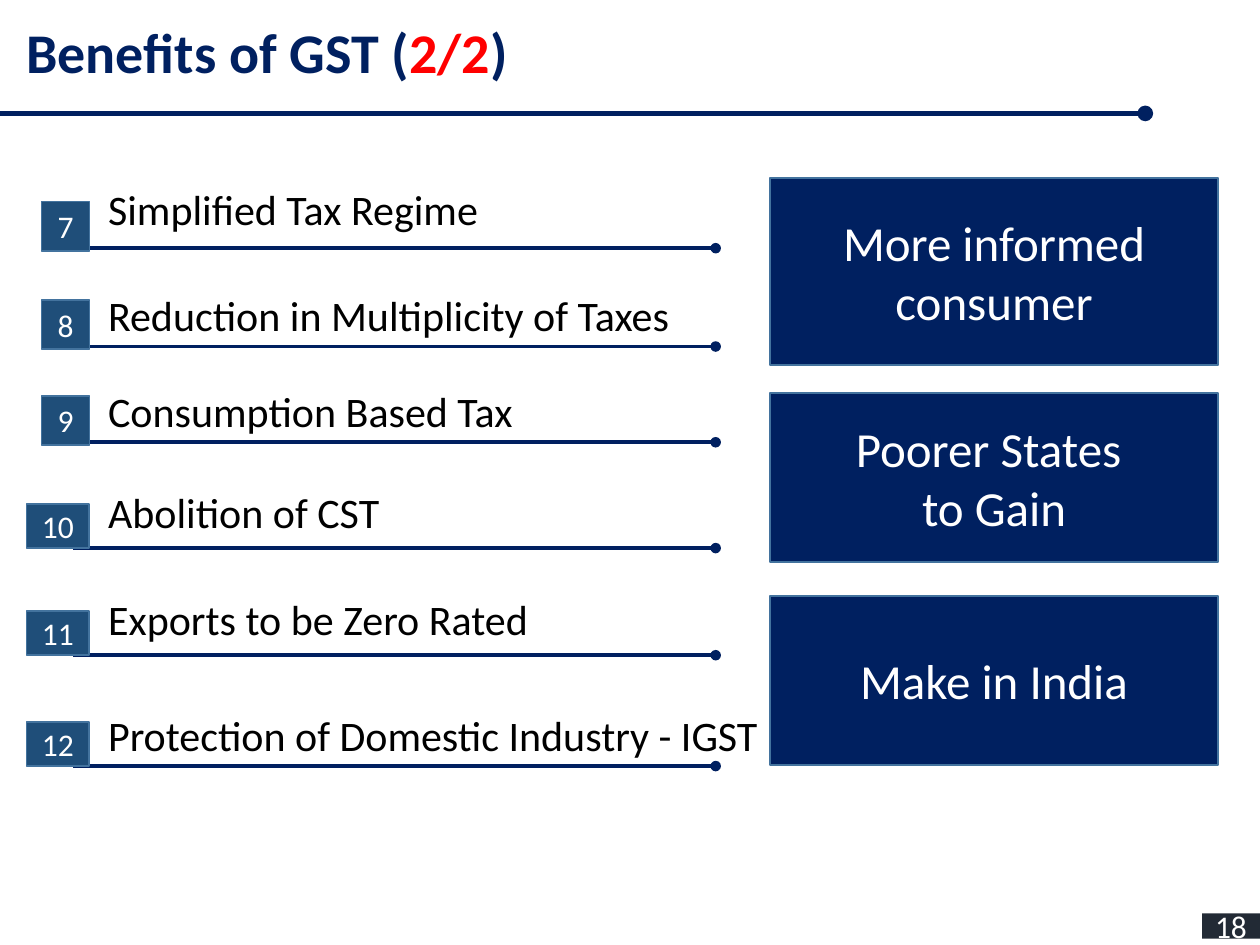
from lxml import etree
from pptx import Presentation
from pptx.dml.color import RGBColor
from pptx.enum.shapes import MSO_CONNECTOR, MSO_SHAPE
from pptx.enum.text import MSO_ANCHOR, MSO_AUTO_SIZE, PP_ALIGN
from pptx.oxml.ns import qn
from pptx.util import Inches, Pt

RECT = MSO_SHAPE.RECTANGLE
LINE = MSO_CONNECTOR.STRAIGHT
MID = MSO_ANCHOR.MIDDLE
MIDST = PP_ALIGN.CENTER
GROW = MSO_AUTO_SIZE.SHAPE_TO_FIT_TEXT
FONT = "Calibri"
HUES = {"navy": "002060", "red": "FF0000", "blue": "1F4E79", "edge": "43739E",
        "slate": "222A35", "white": "FFFFFF", "black": "000000"}

COLS, ROWS = 100, 75
CELL = Inches(10) // COLS

ITEMS = [
    ("7", "Simplified Tax Regime", 19.7, 5.6),
    ("8", "Reduction in Multiplicity of Taxes", 27.5, 5),
    ("9", "Consumption Based Tax", 35.1, 5),
    ("10", "Abolition of CST", 43.5, 5.4),
    ("11", "Exports to be Zero Rated", 52, 5.4),
    ("12", "Protection of Domestic Industry - IGST", 60.8, 5),
]
PANELS = [
    (["More informed consumer"], 14.1, 14.9),
    (["Poorer States ", "to Gain"], 31.2, 13.4),
    (["Make in India"], 47.3, 13.4),
]


def hue(name):
    return RGBColor.from_string(HUES[name])


def grid(*cells):
    return [round(n * CELL) for n in cells]


def style(para, size, color):
    para.font.name = FONT
    para.font.size = Pt(size)
    para.font.color.rgb = hue(color)


def rule(slide, left, right, y, width):
    line = slide.shapes.add_connector(LINE, *grid(left, y, right, y))
    line.line.color.rgb = hue("navy")
    line.line.width = Pt(width)
    pen = line.line._get_or_add_ln()
    etree.SubElement(pen, qn("a:tailEnd"), type="oval")
    etree.SubElement(line._element.spPr, qn("a:effectLst"))


def block(slide, box, texts, size, fill, edge=None):
    shape = slide.shapes.add_shape(RECT, *grid(*box))
    shape.shadow.inherit = False
    shape.fill.solid()
    shape.fill.fore_color.rgb = hue(fill)
    if edge:
        shape.line.color.rgb = hue(edge)
        shape.line.width = Pt(1)
    else:
        shape.line.fill.background()
    frame = shape.text_frame
    frame.vertical_anchor = MID
    frame.text = "\n".join(texts)
    for para in frame.paragraphs:
        para.alignment = MIDST
        style(para, size, "white")


def label(slide, box):
    frame = slide.shapes.add_textbox(*grid(*box)).text_frame
    frame.word_wrap = True
    frame.auto_size = GROW
    return frame.paragraphs[0]


def header(slide, box):
    left, top, width, height = box
    rule(slide, left, left + width, top + height, 3)
    para = label(slide, (left + 1.1, top + 0.9, 83.1, 6.4))
    style(para, 32, "navy")
    para.font.bold = True
    for text, color in (("Benefits of GST (", "navy"), ("2/2", "red"), (")", "navy")):
        run = para.add_run()
        run.text = text
        run.font.color.rgb = hue(color)


def item(slide, box, num, text):
    left, top, width, height = box
    base = top + height
    rule(slide, left + 3.7, left + width, base, 2)
    wide, tall, drop = (3.8, 3.9, 0.2) if len(num) == 1 else (5, 3.5, 0)
    block(slide, (left + 5 - wide, base + drop - tall, wide, tall), [num], 18, "blue", "edge")
    para = label(slide, (left + 5.5, top, 83.7, 5))
    para.text = text
    style(para, 24, "black")


def items(slide, left, width):
    for num, text, base, rise in ITEMS:
        item(slide, (left, base - rise, width, rise), num, text)


def panels(slide, left, width):
    for texts, top, height in PANELS:
        block(slide, (left, top, width, height), texts, 28, "navy", "edge")


def main():
    deck = Presentation()
    deck.slide_width, deck.slide_height = grid(COLS, ROWS)
    slide = deck.slides.add_slide(deck.slide_layouts[6])
    header(slide, (0, 0, 90.9, 9))
    items(slide, 2.1, 54.7)
    panels(slide, 61.1, 35.6)
    block(slide, (COLS - 4.6, 72.5, 4.6, 2), ["18"], 18, "slate")
    deck.save("out.pptx")


if __name__ == "__main__":
    main()
